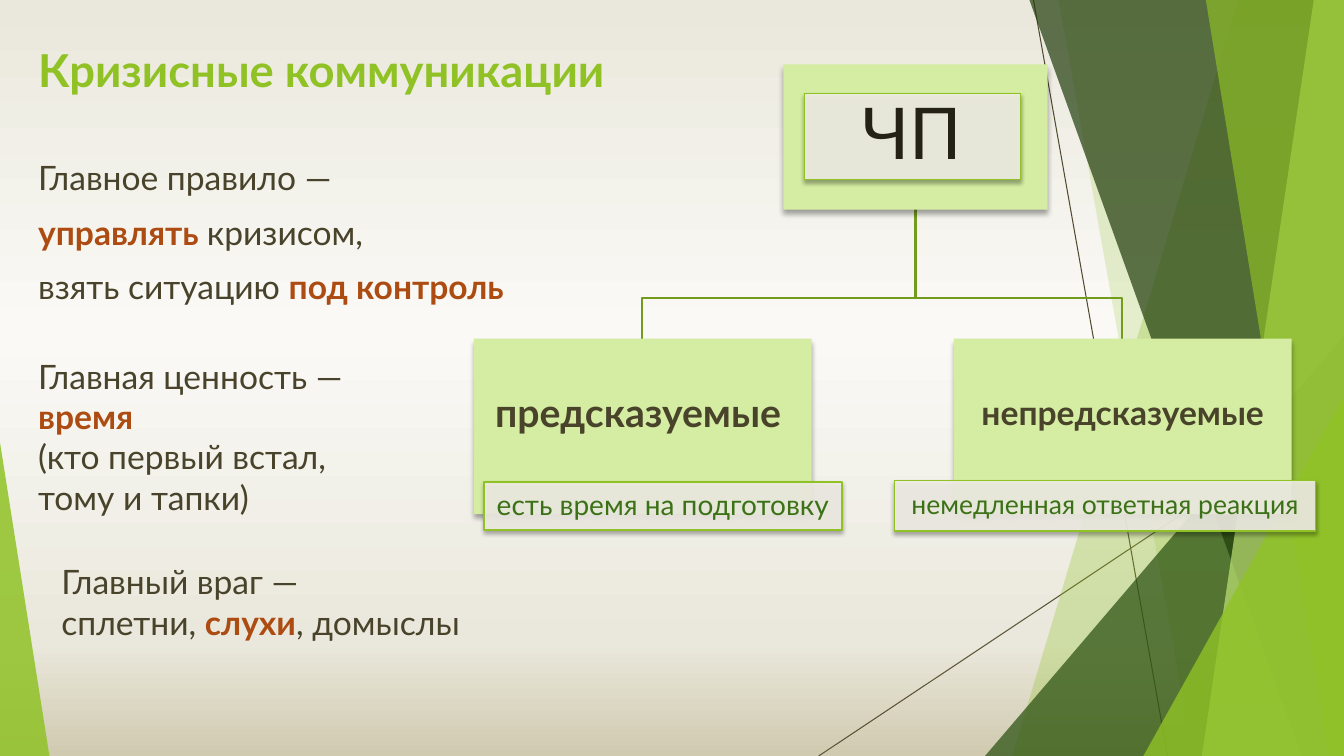
from lxml.etree import SubElement
from pptx import Presentation
from pptx.dml.color import RGBColor
from pptx.enum.shapes import MSO_CONNECTOR as Connector, MSO_SHAPE as Shape
from pptx.enum.text import MSO_ANCHOR as Anchor, PP_ALIGN as Align
from pptx.oxml.ns import qn
from pptx.util import Pt

PX = 9144  # EMU per px, 100 px to the inch
WIDTH, HEIGHT = 1333, 750
FONT = "Lato"
GREEN, PALE, PANEL = "90C226", "D5EDA2", "F0EEE5"
TEXT, ACCENT = "48432A", "AD4C12"


def color(value):
    return RGBColor.from_string(value)


def emu(*lengths):
    return [length * PX for length in lengths]


# ---------- Formatting ----------
def set_fill(shape, value, alpha=100):
    shape.fill.solid()
    shape.fill.fore_color.rgb = color(value)
    if alpha < 100:
        tint = shape.element.find(".//" + qn("a:srgbClr"))
        SubElement(tint, qn("a:alpha"), val=str(alpha * 1000))


def set_line(shape, value=None, width=1):
    if value is None:
        shape.line.fill.background()
    else:
        shape.line.color.rgb = color(value)
        shape.line.width = Pt(width)


def set_shadow(shape, blur, distance):
    effects = shape.element.spPr.find(qn("a:effectLst"))
    shadow = SubElement(effects, qn("a:outerShdw"), blurRad=str(Pt(blur)),
                        dist=str(Pt(distance)), dir="5400000", rotWithShape="0")
    tint = SubElement(shadow, qn("a:srgbClr"), val="000000")
    SubElement(tint, qn("a:alpha"), val="35000")


def write(shape, paragraphs, size, insets=(10, 5, 10, 5), anchor=Anchor.TOP, **layout):
    """Each paragraph is a list of (text, color, bold) runs."""
    frame = shape.text_frame
    frame.word_wrap = True
    frame.vertical_anchor = anchor
    for side, inset in zip(("left", "top", "right", "bottom"), emu(*insets)):
        setattr(frame, f"margin_{side}", inset)
    for index, runs in enumerate(paragraphs):
        paragraph = frame.add_paragraph() if index else frame.paragraphs[0]
        for name, value in layout.items():
            setattr(paragraph, name, value)
        for text, value, bold in runs:
            run = paragraph.add_run()
            run.text = text
            for name, setting in {"name": FONT, "size": Pt(size), "bold": bold}.items():
                setattr(run.font, name, setting)
            run.font.color.rgb = color(value)


# ---------- Parts ----------
def add_block(slide, box, kind, fill, alpha=100, line=None):
    shape = slide.shapes.add_shape(kind, *emu(*box))
    shape.shadow.inherit = False
    set_fill(shape, fill, alpha)
    set_line(shape, line)
    return shape


def add_outline(slide, points, close):
    builder = slide.shapes.build_freeform(*points[0], scale=PX)
    builder.add_line_segments(points[1:], close=close)
    shape = builder.convert_to_shape()
    shape.shadow.inherit = False
    return shape


def add_text(slide, box, paragraphs, size=24, **layout):
    write(slide.shapes.add_textbox(*emu(*box)), paragraphs, size, **layout)


def add_box(slide, box, text, size, insets):
    """Pale green box of the chart."""
    shape = add_block(slide, box, Shape.RECTANGLE, PALE)
    set_shadow(shape, 4, 3)
    if text:
        write(shape, [[(text, TEXT, True)]], size, insets, Anchor.MIDDLE,
              alignment=Align.CENTER, line_spacing=0.9)


def add_panel(slide, box, text, size, value, insets):
    """Framed label lying over a chart box."""
    shape = add_block(slide, box, Shape.RECTANGLE, PANEL, 90, GREEN)
    set_shadow(shape, 3, 2)
    write(shape, [[(text, value, False)]], size, insets, Anchor.MIDDLE,
          alignment=Align.CENTER, line_spacing=0.9)


# ---------- Regions ----------
def draw_background(slide):
    fill = slide.background.fill
    fill.gradient()
    fill.gradient_angle = 270
    stops = slide.element.find(".//" + qn("a:gsLst"))
    for stop in list(stops):
        stops.remove(stop)
    for place, value in ((0, "EAE8DC"), (44, "FAF9F6"), (85, "EAE8DC"), (100, "D0CAB0")):
        stop = SubElement(stops, qn("a:gs"), pos=str(place * 1000))
        SubElement(stop, qn("a:srgbClr"), val=value)


def draw_facets(slide, right, bottom):
    # Thin crossing lines
    for ends, value in (((1025, 0, 1158, bottom), "504A2F"),
                        ((right, 403, 812, bottom), "5B5335")):
        line = slide.shapes.add_connector(Connector.STRAIGHT, *emu(*ends))
        set_line(line, value, 0.75)
        SubElement(line.element.spPr, qn("a:effectLst"))

    def band(top_x, bottom_x, value, alpha):
        points = [(top_x, 0), (right, 0), (right, bottom), (bottom_x, bottom)]
        shape = add_outline(slide, points, True)
        set_fill(shape, value, alpha)
        set_line(shape)

    def corner(left, top, width, apex, value, alpha):
        box = (left, top, width, bottom - top)
        shape = add_block(slide, box, Shape.ISOSCELES_TRIANGLE, value, alpha)
        shape.adjustments[0] = apex

    # Overlapping bands and corner triangles
    band(1228, 1004, GREEN, 30)
    band(1050, 1183, GREEN, 20)
    corner(977, 333, right - 977, 1, "2A5010", 72)
    band(1021, 1291, "203C0C", 70)
    band(1303, 1192, "C0E474", 70)
    band(1196, 1318, GREEN, 65)
    corner(1134, 393, right - 1134, 1, GREEN, 80)
    corner(0, 439, 49, 0, GREEN, 85)


def draw_chart(slide, left, top):
    root_x, root_bottom = left + 438, top + 143
    branch_y, child_top = top + 232, top + 272
    child_width, child_height = 335, 174
    child_lefts = (left, left + 476)

    # Elbow connectors
    for child_left in reversed(child_lefts):
        child_x = child_left + child_width // 2
        elbow = add_outline(slide, [(root_x, root_bottom), (root_x, branch_y),
                                    (child_x, branch_y), (child_x, child_top)], False)
        elbow.fill.background()
        set_line(elbow, "739B1E", 1.5)

    # Root
    add_box(slide, (left + 307, top, 262, 144), "", 0, None)
    add_panel(slide, (left + 328, top + 29, 214, 85), "ЧП", 51, "242115", (14, 4, 14, 4))

    # Children: name, size, then label, size and its box
    children = (
        ("предсказуемые ", 28, "есть время на подготовку", 20, (10, 414, 355, 48)),
        ("непредсказуемые", 24, "немедленная ответная реакция", 19, (-59, 413, 418, 50)),
    )
    for child_left, (name, size, label, label_size, place) in zip(child_lefts, children):
        add_box(slide, (child_left, child_top, child_width, child_height),
                name, size, (2, 2, 2, 25))
        dx, dy, width, height = place
        add_panel(slide, (child_left + dx, top + dy, width, height),
                  label, label_size, "3C7217", (5, 1, 5, 1))


def draw_texts(slide, left, top):
    add_text(slide, (left, top, 940, 144),
             [[("Кризисные коммуникации", GREEN, True)]], 32.4)
    add_text(slide, (left, top + 114, 488, 212), [
        [("Главное правило —", TEXT, False)],
        [("управлять ", ACCENT, True), ("кризисом,", TEXT, False)],
        [("взять ситуацию ", TEXT, False), ("под контроль", ACCENT, True)],
    ], space_before=Pt(10))
    add_text(slide, (left, top + 311, 432, 195), [
        [("Главная ценность —", TEXT, False)],
        [("время", ACCENT, True)],
        [("(кто первый встал,", TEXT, False)],
        [("тому и тапки)", TEXT, False)],
    ])
    add_text(slide, (left + 23, top + 515, 652, 91), [
        [("Главный враг —", TEXT, False)],
        [("сплетни, ", TEXT, False), ("слухи", ACCENT, True), (", домыслы", TEXT, False)],
    ])


def main():
    presentation = Presentation()
    presentation.slide_width, presentation.slide_height = emu(WIDTH, HEIGHT)
    slide = presentation.slides.add_slide(presentation.slide_layouts[6])
    draw_background(slide)
    draw_facets(slide, WIDTH, HEIGHT)
    draw_chart(slide, 470, 64)
    draw_texts(slide, 28, 37)
    presentation.save("out.pptx")


if __name__ == "__main__":
    main()
